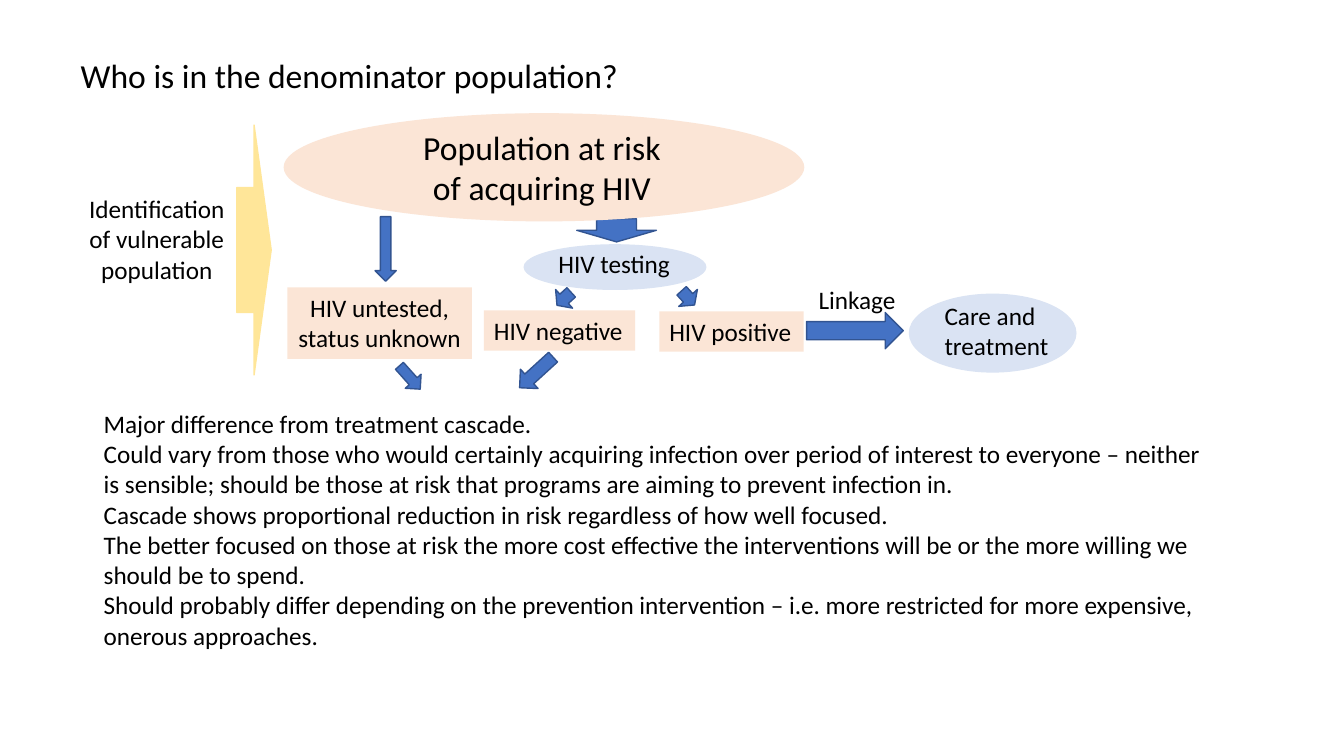
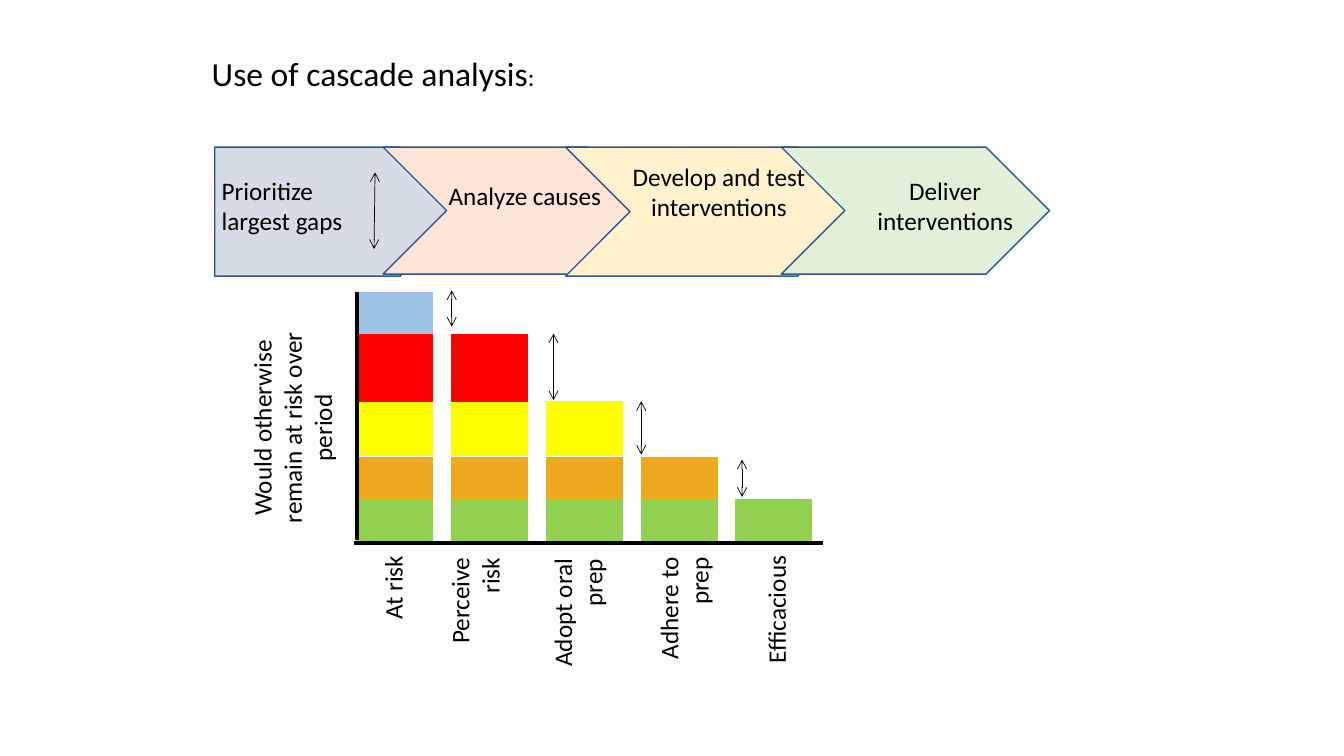
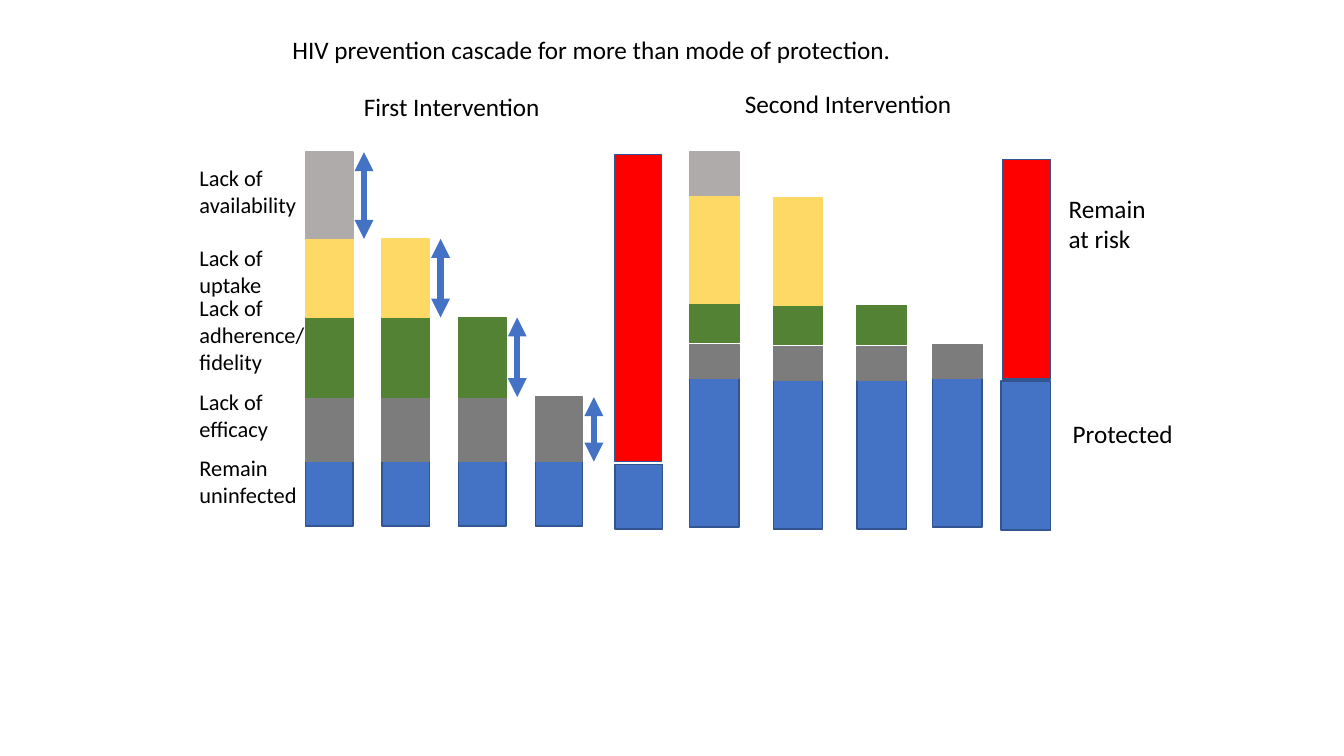
"""Build three slides on HIV prevention cascade analysis."""
from lxml import etree
from pptx import Presentation
from pptx.dml.color import RGBColor
from pptx.enum.shapes import MSO_CONNECTOR, MSO_SHAPE
from pptx.enum.text import MSO_ANCHOR, MSO_AUTO_SIZE, PP_ALIGN
from pptx.oxml.ns import qn
from pptx.util import Inches, Pt

LEFT, CENTER, RIGHT = PP_ALIGN.LEFT, PP_ALIGN.CENTER, PP_ALIGN.RIGHT
RECTANGLE, ELLIPSE = MSO_SHAPE.RECTANGLE, MSO_SHAPE.OVAL
DOWN_ARROW, RIGHT_ARROW = MSO_SHAPE.DOWN_ARROW, MSO_SHAPE.RIGHT_ARROW
PENTAGON, CHEVRON = MSO_SHAPE.PENTAGON, MSO_SHAPE.CHEVRON

FONT = "Calibri"
TITLE_ONLY = 5
COLORS = {
    "black": "000000", "blue": "4472C4", "outline": "325491",
    "pale blue": "DAE3F3", "peach": "FBE5D6", "sand": "FFE699",
    "slate": "D6DCE5", "cream": "FFF2CC", "mint": "E2F0D9",
    "sky": "9DC3E6", "red": "FF0000", "yellow": "FFFF00",
    "orange": "EEA91E", "lime": "92D050", "gold": "FFD966",
    "green": "548235", "gray": "7C7C7C", "light gray": "AFABAB",
}

DENOMINATOR_TITLE = [("Who is in the denominator population?", 24)]
FLOW_SHAPES = [
    (ELLIPSE, (5.2, 2.43, 1.8, 0.44), 0, "pale blue", "pale blue"),
    (DOWN_ARROW, (5.72, 2.17, 0.79, 0.23), 0, "blue", "outline"),
    (DOWN_ARROW, (8.3, 2.8, 0.36, 0.96), 270, "blue", "outline"),
    (DOWN_ARROW, (5.19, 3.47, 0.26, 0.45), 47.6, "blue", "outline"),
    (DOWN_ARROW, (3.96, 3.59, 0.21, 0.31), 318.3, "blue", "outline"),
    (ELLIPSE, (2.82, 1.13, 5.15, 1.06), 0, "peach", "peach"),
    (RIGHT_ARROW, (2.35, 1.24, 0.34, 2.48), 0, "sand", "sand"),
    (ELLIPSE, (9.02, 2.92, 1.65, 0.77), 0, "pale blue", "pale blue"),
    (DOWN_ARROW, (5.47, 2.87, 0.25, 0.19), 47.6, "blue", "outline"),
    (DOWN_ARROW, (6.7, 2.86, 0.25, 0.19), 317.6, "blue", "outline"),
    (DOWN_ARROW, (3.72, 2.15, 0.21, 0.64), 0, "blue", "outline"),
]
STATUS_BOXES = [
    ("HIV positive", (6.54, 3.09, 1.43, 0.4), LEFT),
    ("HIV negative", (4.8, 3.08, 1.5, 0.4), LEFT),
    ("HIV untested, status unknown", (2.85, 2.85, 1.83, 0.71), CENTER),
]
FLOW_LABELS = [
    ("HIV testing", (5.44, 2.41, 1.32, 0.4), LEFT, 18),
    ("Linkage", (8.02, 2.77, 1.8, 0.4), LEFT, 18),
    ("Population at risk of acquiring HIV", (4.04, 1.21, 2.67, 0.91), CENTER, 24),
    ("Identification of vulnerable population", (0.7, 1.87, 1.71, 1.01), CENTER, 18),
    ("Care and treatment", (9.27, 2.93, 1.8, 0.71), LEFT, 18),
]
DENOMINATOR_NOTES = [
    "Major difference from treatment cascade.",
    "Could vary from those who would certainly acquiring infection over period of interest "
    "to everyone – neither is sensible; should be those at risk that programs are aiming to "
    "prevent infection in.",
    "Cascade shows proportional reduction in risk regardless of how well focused.",
    "The better focused on those at risk the more cost effective the interventions will be "
    "or the more willing we should be to spend.",
    "Should probably differ depending on the prevention intervention – i.e. more restricted "
    "for more expensive, onerous approaches.",
]

USE_TITLE = [("Use of cascade analysis", 24), (":", 18)]
STEPS = [
    (PENTAGON, (2.13, 1.46, 2.48, 1.28), "slate",
     "Prioritize largest gaps", (2.1, 1.69, 1.75, 0.71), LEFT),
    (CHEVRON, (3.8, 1.46, 2.66, 1.26), "peach",
     "Analyze causes", (4.33, 1.74, 1.75, 0.4), CENTER),
    (CHEVRON, (5.61, 1.46, 2.94, 1.28), "cream",
     "Develop and test interventions", (6.17, 1.55, 1.92, 0.71), CENTER),
    (CHEVRON, (7.75, 1.46, 2.66, 1.26), "mint",
     "Deliver interventions", (8.37, 1.69, 2.01, 0.71), CENTER),
]
PREP_SEGMENTS = [
    (2.9, 0.41, "sky", "sky"), (3.32, 0.66, "red", "red"),
    (3.99, 0.53, "yellow", "yellow"), (4.54, 0.41, "orange", "orange"),
    (4.96, 0.41, "lime", "lime"),
]
PREP_COLUMNS = [(3.54 + 0.94 * index, 0) for index in range(5)]
AXES = [(3.51, 5.39, 8.16, 5.39), (3.54, 2.9, 3.54, 5.36)]
GAP_ARROWS = [
    (3.72, 1.71, 3.71, 2.47), (4.48, 2.88, 4.48, 3.24), (5.49, 3.31, 5.49, 3.97),
    (6.36, 3.98, 6.36, 4.51), (7.36, 4.56, 7.36, 4.93),
]
VERTICAL_LABELS = [
    ("At risk", (3.45, 5.66, 0.89, 0.4), RIGHT),
    ("Perceive risk", (4.03, 5.76, 1.36, 0.71), RIGHT),
    ("Adopt oral prep", (4.99, 5.83, 1.48, 0.71), RIGHT),
    ("Adhere to prep", (6.1, 5.76, 1.37, 0.71), RIGHT),
    ("Efficacious", (7.01, 5.9, 1.37, 0.4), RIGHT),
    ("Would otherwise remain at risk over period", (1.58, 3.74, 2.64, 1.01), CENTER),
]

MODES_TITLE = [("HIV prevention cascade for more than mode of protection.", 18)]
LOSS_LABELS = [
    ("Lack of availability", 1.58, 1.29, 0.64), ("Lack of uptake", 2.37, 1.14, 0.64),
    ("Lack of adherence/ fidelity", 2.87, 1.29, 0.91),
    ("Lack of efficacy", 3.8, 1.11, 0.64), ("Remain uninfected", 4.46, 1.29, 0.64),
]
MODE_LABELS = [
    ("First Intervention", (3.51, 0.86, 1.96, 0.4)),
    ("Second Intervention", (7.29, 0.83, 2.27, 0.4)),
    ("Remain at risk", (10.5, 1.87, 1.08, 0.71)),
    ("Protected", (10.54, 4.1, 1.21, 0.4)),
]
FIRST_SEGMENTS = [
    (1.51, 0.86, "light gray", "light gray"), (2.37, 0.78, "gold", "gold"),
    (3.15, 0.79, "green", "green"), (3.94, 0.64, "gray", "gray"),
    (4.58, 0.64, "blue", "outline"),
]
FIRST_COLUMNS = [(3.03 + 0.76 * index, 0) for index in range(4)]
SECOND_SEGMENTS = [
    (1.51, 0.43, "light gray", "light gray"), (1.94, 1.07, "gold", "gold"),
    (3.01, 0.39, "green", "green"), (3.42, 0.33, "gray", "gray"),
    (3.75, 1.48, "blue", "outline"),
]
SECOND_COLUMNS = [(6.84, 0), (7.67, 0.02), (8.5, 0.02), (9.25, 0)]
RESULT_BARS = [
    ((6.1, 4.61, 0.47, 0.64), "blue"), ((6.1, 1.53, 0.46, 3.05), "red"),
    ((9.93, 3.78, 0.49, 1.48), "blue"), ((9.94, 1.58, 0.48, 2.18), "red"),
]


def color(name):
    return RGBColor.from_string(COLORS[name])


def inches(values):
    return [Inches(value) for value in values]


def style_frame(frame):
    frame.word_wrap = True
    frame.auto_size = MSO_AUTO_SIZE.NONE
    frame.vertical_anchor = MSO_ANCHOR.TOP


def style_font(font, size):
    font.name, font.size = FONT, Pt(size)
    font.color.rgb = color("black")


def add_titled_slide(presentation, runs, box):
    slide = presentation.slides.add_slide(presentation.slide_layouts[TITLE_ONLY])
    title = slide.shapes.title
    title.left, title.top, title.width, title.height = inches(box)
    style_frame(title.text_frame)
    paragraph = title.text_frame.paragraphs[0]
    paragraph.alignment = LEFT
    for text, size in runs:
        run = paragraph.add_run()
        run.text = text
        style_font(run.font, size)
    return slide


def add_block(slide, kind, box, fill, line, rotation=0):
    shape = slide.shapes.add_shape(kind, *inches(box))
    shape.rotation = rotation
    shape.shadow.inherit = False
    shape.fill.solid()
    shape.fill.fore_color.rgb = color(fill)
    shape.line.color.rgb = color(line)
    shape.line.width = Pt(1)


def add_label(slide, texts, box, alignment=LEFT, size=18, rotation=0, fill=None):
    label = slide.shapes.add_textbox(*inches(box))
    label.rotation = rotation
    if fill:
        label.fill.solid()
        label.fill.fore_color.rgb = color(fill)
    frame = label.text_frame
    style_frame(frame)
    for index, text in enumerate(texts):
        paragraph = frame.add_paragraph() if index else frame.paragraphs[0]
        paragraph.text = text
        paragraph.alignment = alignment
        style_font(paragraph.font, size)


def add_line(slide, ends, line, width, arrow=None):
    connector = slide.shapes.add_connector(MSO_CONNECTOR.STRAIGHT, *inches(ends))
    connector.line.color.rgb = color(line)
    connector.line.width = Pt(width)
    if arrow:
        outline = connector.line._get_or_add_ln()
        for end in ("a:headEnd", "a:tailEnd"):
            etree.SubElement(outline, qn(end), type=arrow)
    etree.SubElement(connector._element.spPr, qn("a:effectLst"))


def add_cascade(slide, columns, width, segments):
    for index, (left, shift) in enumerate(columns):
        for top, height, fill, line in reversed(segments[index:]):
            add_block(slide, RECTANGLE, (left, top + shift, width, height), fill, line)


def build_denominator(presentation):
    slide = add_titled_slide(presentation, DENOMINATOR_TITLE, (0.7, 0.49, 5.58, 0.5))
    for kind, box, rotation, fill, line in FLOW_SHAPES:
        add_block(slide, kind, box, fill, line, rotation)
    for text, box, alignment in STATUS_BOXES:
        add_label(slide, [text], box, alignment, fill="peach")
    for text, box, alignment, size in FLOW_LABELS:
        add_label(slide, [text], box, alignment, size)
    add_label(slide, DENOMINATOR_NOTES, (0.93, 4, 11.23, 2.83))


def build_use(presentation):
    slide = add_titled_slide(presentation, USE_TITLE, (2, 0.47, 3.44, 0.5))
    for kind, box, fill, text, text_box, alignment in STEPS:
        add_block(slide, kind, box, fill, "outline")
        add_label(slide, [text], text_box, alignment)
    add_cascade(slide, PREP_COLUMNS, 0.75, PREP_SEGMENTS)
    for ends in AXES:
        add_line(slide, ends, "black", 3)
    for ends in GAP_ARROWS:
        add_line(slide, ends, "black", 0.5, "arrow")
    for text, box, alignment in VERTICAL_LABELS:
        add_label(slide, [text], box, alignment, rotation=270)


def build_modes(presentation):
    slide = add_titled_slide(presentation, MODES_TITLE, (2.8, 0.29, 8.33, 0.4))
    for text, top, width, height in LOSS_LABELS:
        add_label(slide, [text], (1.88, top, width, height), size=16)
    add_cascade(slide, FIRST_COLUMNS, 0.47, FIRST_SEGMENTS)
    add_cascade(slide, SECOND_COLUMNS, 0.49, SECOND_SEGMENTS)
    for (left, _), (top, height, _, _) in zip(FIRST_COLUMNS, FIRST_SEGMENTS):
        center = left + 0.58
        add_line(slide, (center, top, center, top + height), "blue", 4.5, "triangle")
    for box, fill in RESULT_BARS:
        add_block(slide, RECTANGLE, box, fill, "outline")
    for text, box in MODE_LABELS:
        add_label(slide, [text], box)


def main():
    presentation = Presentation()
    presentation.slide_width, presentation.slide_height = Inches(13.33), Inches(7.5)
    build_denominator(presentation)
    build_use(presentation)
    build_modes(presentation)
    presentation.save("out.pptx")


if __name__ == "__main__":
    main()
